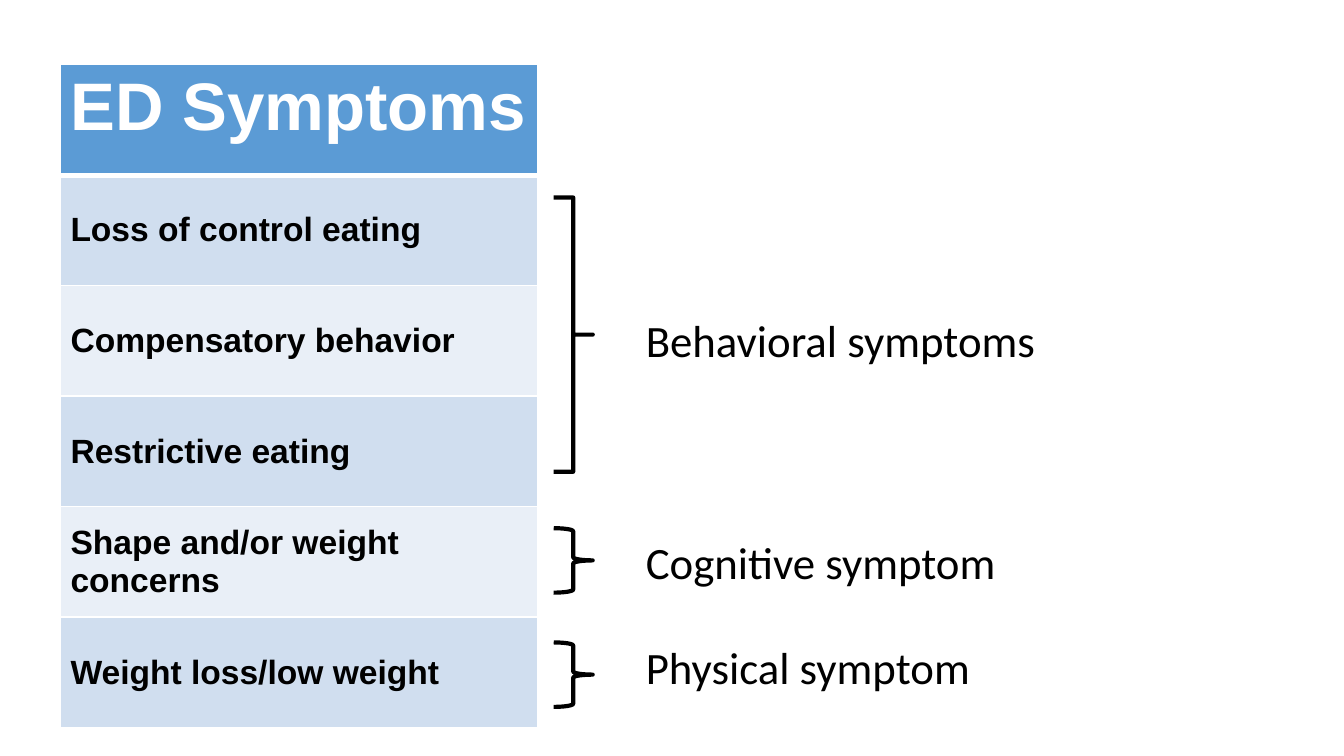
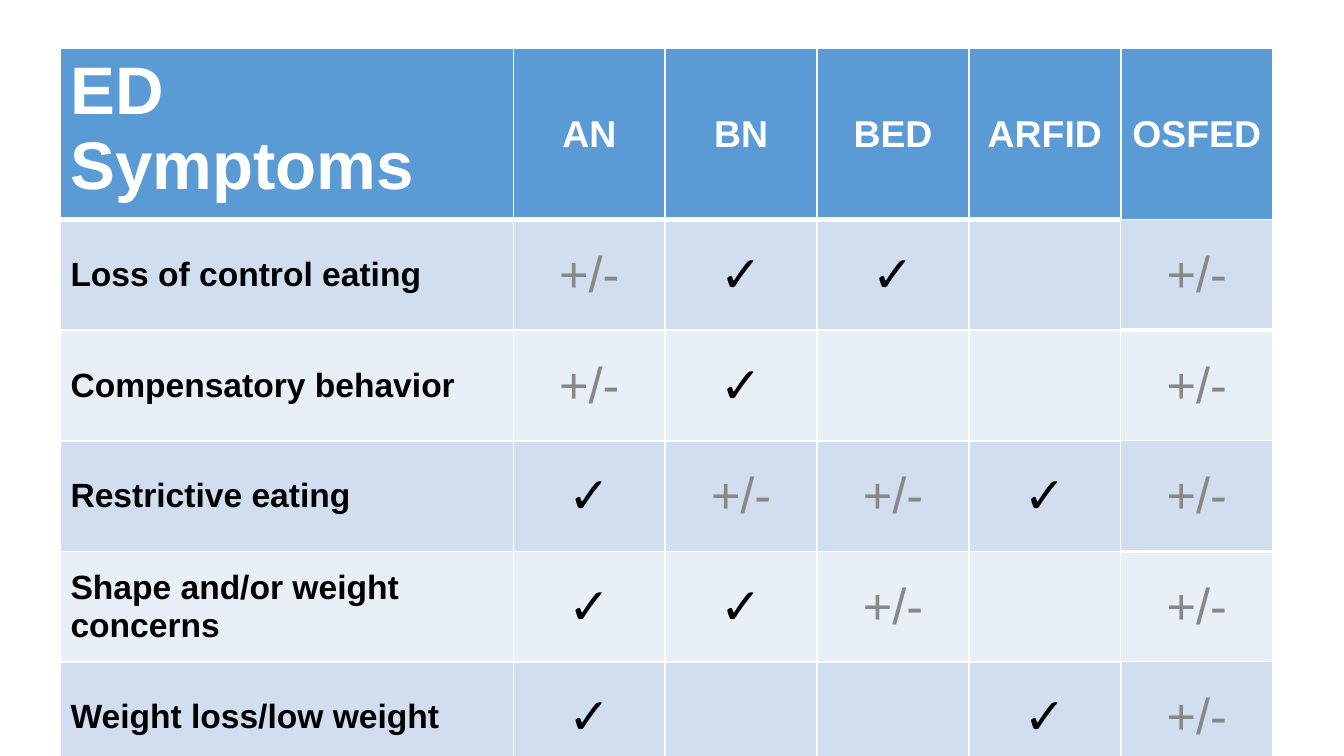
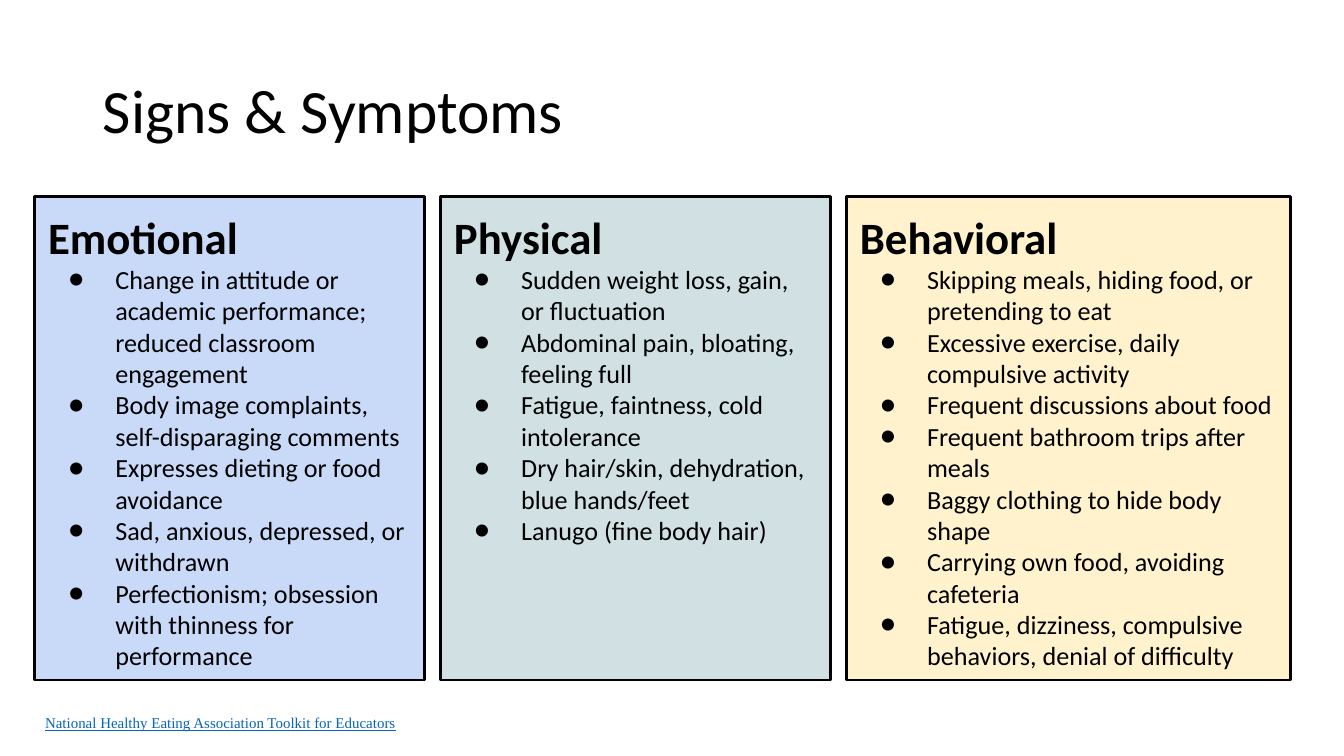
from lxml.etree import SubElement
from pptx import Presentation
from pptx.dml.color import RGBColor
from pptx.enum.shapes import MSO_SHAPE as Preset
from pptx.enum.text import MSO_ANCHOR as Anchor, MSO_AUTO_SIZE as AutoSize, PP_ALIGN as Align
from pptx.oxml import parse_xml
from pptx.oxml.ns import nsdecls, qn
from pptx.util import Inches, Pt

# Slide size (16:9) and a square grid, ten columns wide
WIDTH = Inches(10)
HEIGHT = WIDTH * 9 // 16
CELL = WIDTH // 10

# Shared colours and formats
BLACK, WHITE, GREY, LINK = "000000", "FFFFFF", "888888", "0563C1"
HEADER_FILL, BAND_FILLS = "5B9BD5", ("D0DEEF", "E9EFF7")
TABLE_TITLE = {"name": "Arial", "size": Pt(36), "bold": True}
TABLE_HEADING = {"name": "Arial", "size": Pt(20), "bold": True}
ROW_LABEL = {"name": "Arial", "size": Pt(18), "bold": True}
MARK = {"name": "Arial", "size": Pt(27), "bold": False}
TITLE = {"name": "Calibri", "size": Pt(33)}
GROUP_LABEL = {"name": "Calibri", "size": Pt(24)}
PANEL_HEADING = {"name": "Calibri", "size": Pt(24), "bold": True}
PANEL_ITEM = {"name": "Calibri", "size": Pt(14), "bold": False}
SOURCE = {"name": "Times New Roman", "size": Pt(8), "underline": True}

# Table geometry and horizontal border widths, from top to bottom
TABLE_LEFT, TABLE_FRAME = 0.45, 3.28
TABLE_ROW = 3.29 / 4
BORDERS = (1, 3, 1, 1, 1, 1, 1)
LAST_BORDERS = (1, 0.75, 2.25, 0.75, 2.25, 0.75, 1)

# Content: each symptom with its marks for the disorders
DISORDERS = ("AN", "BN", "BED", "ARFID", "OSFED")
SYMPTOMS = {
    "Loss of control eating": ("+/-", "✓", "✓", "", "+/-"),
    "Compensatory behavior": ("+/-", "✓", "", "", "+/-"),
    "Restrictive eating": ("✓", "+/-", "+/-", "✓", "+/-"),
    "Shape and/or weight concerns": ("✓", "✓", "+/-", "", "+/-"),
    "Weight loss/low weight": ("✓", "", "", "✓", "+/-"),
}
# Label, label top, brace top, brace height, brace curve
SYMPTOM_GROUPS = (
    ("Behavioral symptoms", 2.29, 1.47, 2.04, 0),
    ("Physical symptom", 4.72, 4.78, 0.48, 0.08),
    ("Cognitive symptom", 3.94, 3.93, 0.48, 0.08),
)
# Heading, fill, width, items
PANELS = (
    ("Emotional", "C9DAF8", 2.9, (
        "Change in attitude or academic performance; reduced classroom engagement",
        "Body image complaints, self-disparaging comments",
        "Expresses dieting or food avoidance",
        "Sad, anxious, depressed, or withdrawn",
        "Perfectionism; obsession with thinness for performance",
    )),
    ("Physical", "D0E0E3", 2.9, (
        "Sudden weight loss, gain, or fluctuation",
        "Abdominal pain, bloating, feeling full",
        "Fatigue, faintness, cold intolerance",
        "Dry hair/skin, dehydration, blue hands/feet",
        "Lanugo (fine body hair)",
    )),
    ("Behavioral", "FFF2CC", 3.3, (
        "Skipping meals, hiding food, or pretending to eat",
        "Excessive exercise, daily compulsive activity",
        "Frequent discussions about food",
        "Frequent bathroom trips after meals",
        "Baggy clothing to hide body shape",
        "Carrying own food, avoiding cafeteria",
        "Fatigue, dizziness, compulsive behaviors, denial of difficulty",
    )),
)


def color(value):
    return RGBColor.from_string(value)


def grid(*cells):
    return [round(count * CELL) for count in cells]


def assign(target, values):
    for name, value in values.items():
        setattr(target, name, value)


def fill_with(target, value):
    target.fill.solid()
    target.fill.fore_color.rgb = color(value)


def set_margins(target, side, top):
    assign(target, {"margin_left": Pt(side), "margin_right": Pt(side),
                    "margin_top": Pt(top), "margin_bottom": Pt(top)})


def write(paragraph, text, style, text_color=BLACK, align=Align.LEFT):
    paragraph.alignment = align
    run = paragraph.add_run()
    run.text = text
    assign(run.font, style)
    run.font.color.rgb = color(text_color)


def add_label(slide, box, text, style, text_color=BLACK, **frame_format):
    frame = slide.shapes.add_textbox(*grid(*box)).text_frame
    set_margins(frame, 5.4, 2.7)
    assign(frame, {"word_wrap": True, **frame_format})
    write(frame.paragraphs[0], text, style, text_color)
    return frame.paragraphs[0]


def add_outlined(slide, preset, box, line_width):
    shape = slide.shapes.add_shape(preset, *grid(*box))
    shape.shadow.inherit = False
    shape.line.color.rgb = color(BLACK)
    shape.line.width = Pt(line_width)
    return shape


def add_brace(slide, top, height, curve):
    brace = add_outlined(slide, Preset.RIGHT_BRACE, (4.12, top, 0.29, height), 2.25)
    brace.fill.background()
    brace.adjustments[0] = curve
    brace.adjustments[1] = 0.5


def add_bullet(paragraph):
    properties = paragraph._p.get_or_add_pPr()
    properties.set("marL", str(Inches(0.5)))
    properties.set("indent", str(Inches(-0.35)))
    bullet_color = SubElement(properties, qn("a:buClr"))
    SubElement(bullet_color, qn("a:srgbClr"), val=BLACK)
    SubElement(properties, qn("a:buFont"), typeface="Calibri")
    SubElement(properties, qn("a:buChar"), char="●")


def add_panel(slide, box, heading, fill, items):
    panel = add_outlined(slide, Preset.RECTANGLE, box, 1.5)
    fill_with(panel, fill)
    frame = panel.text_frame
    set_margins(frame, 7.2, 7.2)
    assign(frame, {"word_wrap": True, "vertical_anchor": Anchor.TOP})
    write(frame.paragraphs[0], heading, PANEL_HEADING)
    for item in items:
        paragraph = frame.add_paragraph()
        write(paragraph, item, PANEL_ITEM)
        add_bullet(paragraph)


def set_borders(cell, widths):
    properties = cell._tc.get_or_add_tcPr()
    for index, (side, width) in enumerate(zip("LRTB", widths)):
        properties.insert(index, parse_xml(
            f'<a:ln{side} {nsdecls("a")} w="{Pt(width)}"><a:solidFill>'
            f'<a:srgbClr val="{WHITE}"/></a:solidFill></a:ln{side}>'))


def cell_style(row, column, text):
    if row == 0:
        return (TABLE_HEADING if column else TABLE_TITLE), WHITE
    if column == 0:
        return ROW_LABEL, BLACK
    return MARK, GREY if text == "+/-" else BLACK


def add_symptom_table(slide, top, column_widths, rows):
    frame = slide.shapes.add_table(
        len(rows), len(column_widths),
        *grid(TABLE_LEFT, top, TABLE_FRAME, TABLE_FRAME))
    table = frame.table
    assign(table, {"first_row": False, "horz_banding": False})
    for column, width in zip(table.columns, grid(*column_widths)):
        column.width = width
    for row in table.rows:
        row.height = grid(TABLE_ROW)[0]
    # The frame keeps its nominal size while the rows run past it
    frame.width, frame.height = grid(TABLE_FRAME, TABLE_FRAME)

    last_column = len(DISORDERS)
    for row, texts in enumerate(rows):
        for column, text in enumerate(texts):
            cell = table.cell(row, column)
            set_margins(cell, 5.4, 2.7)
            is_title = row == column == 0
            cell.vertical_anchor = Anchor.TOP if is_title else Anchor.MIDDLE
            if text:
                style, text_color = cell_style(row, column, text)
                write(cell.text_frame.paragraphs[0], text, style, text_color,
                      Align.CENTER if column else Align.LEFT)
            fill_with(cell, BAND_FILLS[(row - 1) % 2] if row else HEADER_FILL)
            inner = 0 < row < len(rows) - 1
            left, right = (0.75 if inner and edge >= last_column else 1
                           for edge in (column, column + 1))
            borders = LAST_BORDERS if column == last_column else BORDERS
            set_borders(cell, (left, right, *borders[row:row + 2]))


def build_symptom_groups(slide):
    for label, top, *_ in SYMPTOM_GROUPS:
        add_label(slide, (4.73, top, 3.52, 0.48), label, GROUP_LABEL,
                  auto_size=AutoSize.SHAPE_TO_FIT_TEXT)
    for _, _, *brace in SYMPTOM_GROUPS:
        add_brace(slide, *brace)
    add_symptom_table(slide, 0.48, [3.55],
                      [("ED Symptoms",), *((name,) for name in SYMPTOMS)])


def build_symptom_matrix(slide):
    rows = [("ED Symptoms", *DISORDERS)]
    rows += [(name, *marks) for name, marks in SYMPTOMS.items()]
    add_symptom_table(slide, 0.36, [3.37] + [1.13] * len(DISORDERS), rows)


def build_signs(slide):
    title = add_label(slide, (0.69, 0.3, 8.62, 1.09), "Signs & Symptoms", TITLE,
                      vertical_anchor=Anchor.MIDDLE)
    title.line_spacing = 0.9
    add_label(slide, (0.26, 5.27, 4.22, 0.21),
              "National Healthy Eating Association Toolkit for Educators", SOURCE, LINK)
    left, gap = 0.26, 0.12
    for heading, fill, width, items in PANELS:
        add_panel(slide, (left, 1.46, width, 3.6), heading, fill, items)
        left += width + gap


def main():
    presentation = Presentation()
    assign(presentation, {"slide_width": WIDTH, "slide_height": HEIGHT})
    blank = presentation.slide_layouts[6]
    for build in (build_symptom_groups, build_symptom_matrix, build_signs):
        build(presentation.slides.add_slide(blank))
    presentation.save("out.pptx")


if __name__ == "__main__":
    main()
